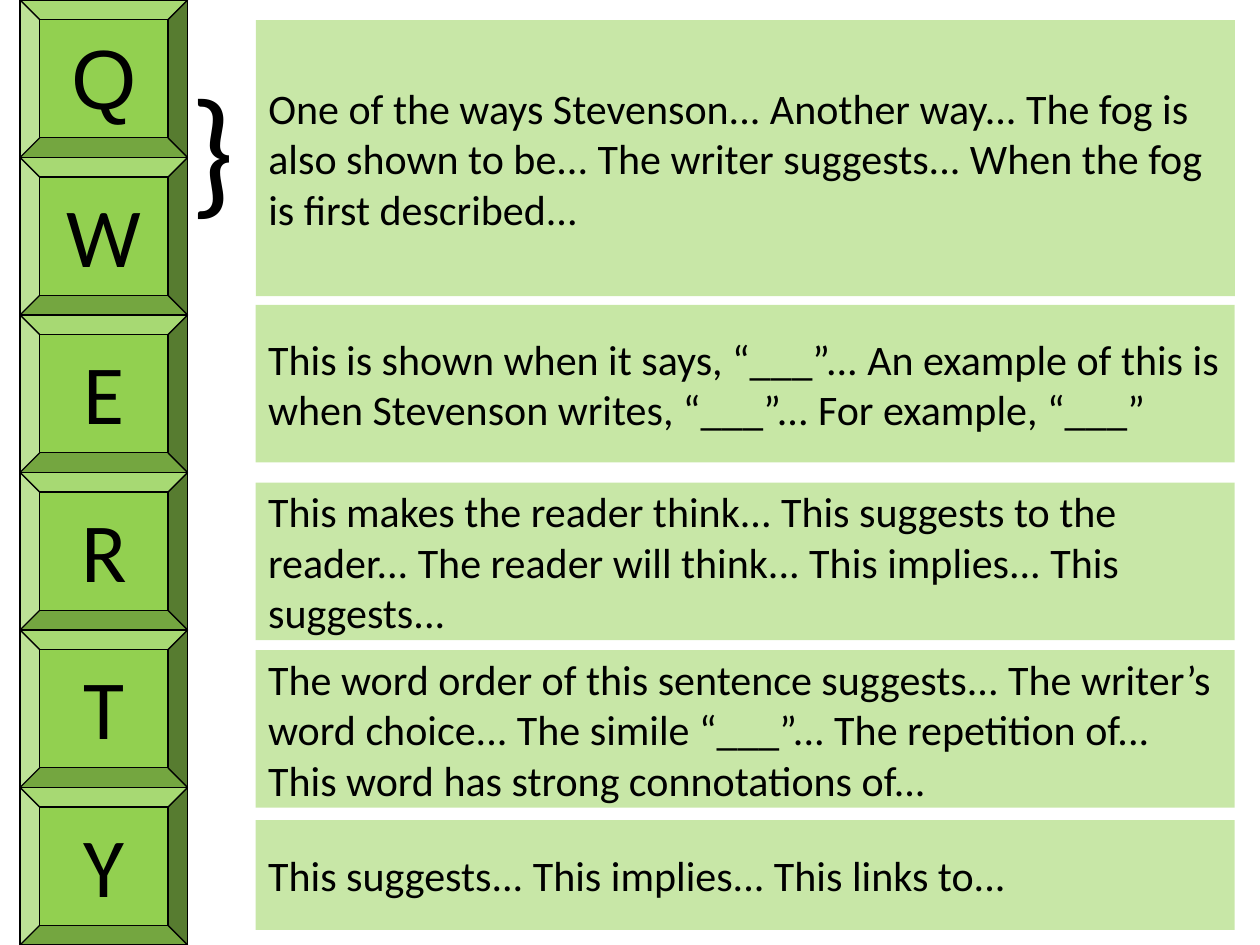
"""Build a slide of six lettered keys beside their sentence starters."""
from dataclasses import dataclass

from lxml.etree import SubElement
from pptx import Presentation
from pptx.dml.color import RGBColor
from pptx.enum.shapes import MSO_SHAPE as Kind
from pptx.enum.text import MSO_ANCHOR as Anchor, MSO_AUTO_SIZE as Fit, PP_ALIGN as Align
from pptx.oxml.ns import qn
from pptx.shapes.autoshape import Shape
from pptx.slide import Slide
from pptx.util import Inches, Pt

GREEN = "92D050"
BLACK = "000000"
KEY = 1.25
LEFT, WIDTH = 2.03, 7.77


@dataclass
class Panel:
    top: float
    height: float
    text: str
    alpha: int = 50


HEAD = Panel(0.16, 2.19, "One of the ways Stevenson... Another way... The fog is also shown "
             "to be... The writer suggests... When the fog is first described...")
PANELS = [
    Panel(2.42, 1.25, "This is shown when it says, “___”... An example of this is when "
          "Stevenson writes, “___”... For example, “___”", 51),
    Panel(3.83, 1.25, "This makes the reader think... This suggests to the reader... "
          "The reader will think... This implies... This suggests..."),
    Panel(5.16, 1.25, "The word order of this sentence suggests... The writer’s word "
          "choice... The simile “___”... The repetition of... This word has strong "
          "connotations of..."),
    Panel(6.51, 0.87, "This suggests... This implies... This links to..."),
]


def paint(color, code: str) -> None:
    color.rgb = RGBColor.from_string(code)


def write(shape: Shape, text: str, size: int, align=Align.LEFT, face: str = "Calibri") -> None:
    frame = shape.text_frame
    frame.text = text
    frame.word_wrap = True
    frame.auto_size = Fit.NONE
    line = frame.paragraphs[0]
    line.alignment = align
    line.font.name = face
    line.font.size = Pt(size)
    paint(line.font.color, BLACK)


def fill(shape: Shape, alpha: int = 100) -> None:
    shape.shadow.inherit = False
    shape.fill.solid()
    paint(shape.fill.fore_color, GREEN)
    if alpha < 100:
        tint = shape.fill._xPr.find(qn("a:solidFill"))[0]
        SubElement(tint, qn("a:alpha"), val=str(alpha * 1000))


def draw_key(slide: Slide, row: int, letter: str) -> None:
    key = slide.shapes.add_shape(Kind.BEVEL, Inches(0.16), Inches(row * KEY),
                                 Inches(1.33), Inches(KEY))
    fill(key)
    paint(key.line.color, BLACK)
    key.line.width = Pt(0.75)
    write(key, letter, 48, Align.CENTER, "Arial" if letter == "Q" else "Calibri")
    key.text_frame.vertical_anchor = Anchor.TOP


def set_panel(shape: Shape, panel: Panel) -> None:
    shape.left, shape.width = Inches(LEFT), Inches(WIDTH)
    shape.top, shape.height = Inches(panel.top), Inches(panel.height)
    fill(shape, panel.alpha)
    shape.line.fill.background()
    write(shape, panel.text, 24)
    shape.text_frame.vertical_anchor = Anchor.MIDDLE


def main() -> None:
    deck = Presentation()
    deck.slide_width, deck.slide_height = Inches(10), Inches(7.5)
    slide = deck.slides.add_slide(deck.slide_layouts[5])
    set_panel(slide.shapes.title, HEAD)
    for row, letter in enumerate("QWERTY"):
        draw_key(slide, row, letter)
    brace = slide.shapes.add_textbox(Inches(1.41), Inches(0.43), Inches(0.55), Inches(1.45))
    write(brace, "}", 80)
    for panel in PANELS:
        set_panel(slide.shapes.add_shape(Kind.RECTANGLE, 0, 0, 0, 0), panel)
    deck.save("out.pptx")


if __name__ == "__main__":
    main()
